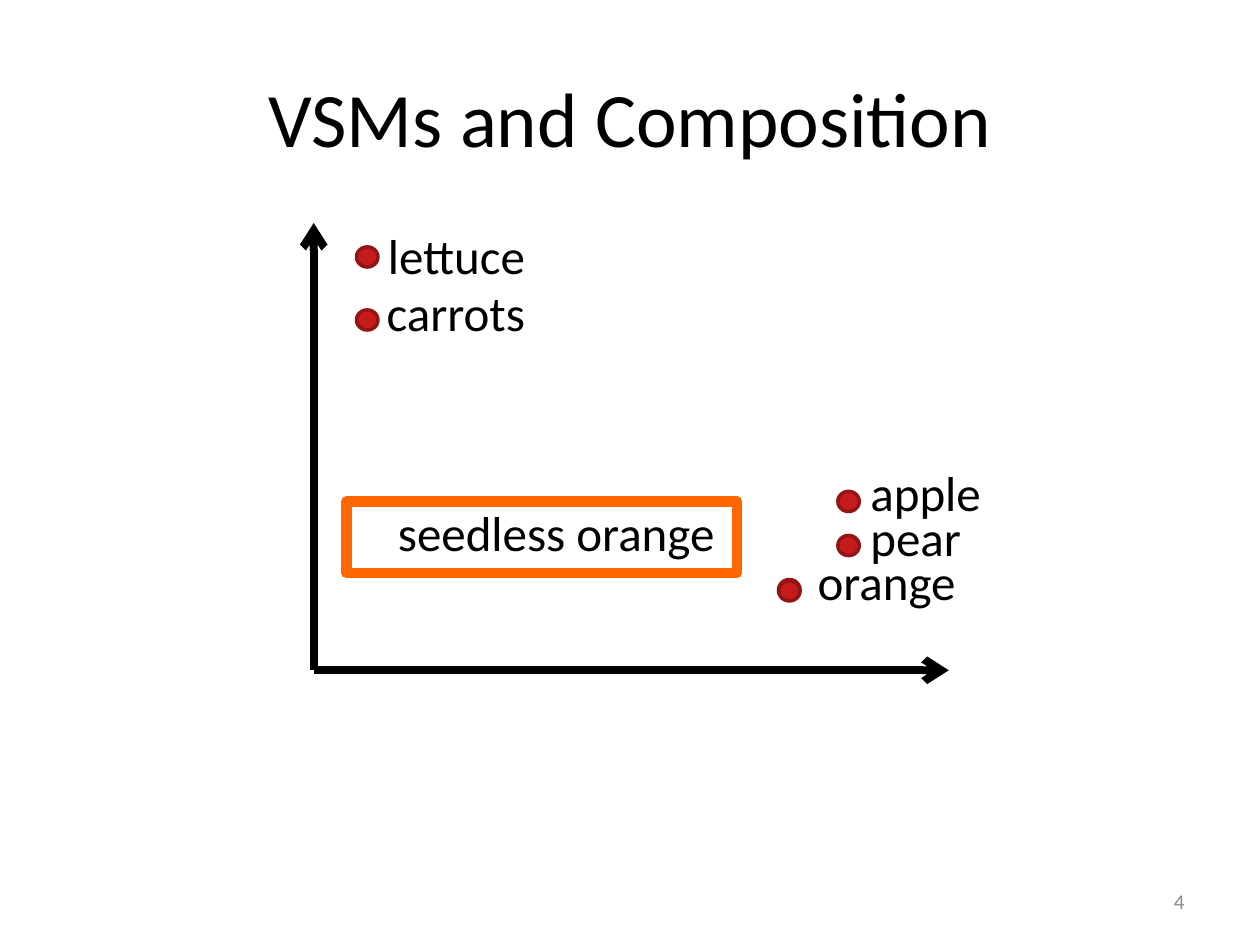
from dataclasses import dataclass

from lxml.etree import SubElement
from pptx import Presentation
from pptx.dml.color import RGBColor as RGB
from pptx.enum.shapes import MSO_CONNECTOR as CONNECTOR, MSO_SHAPE as SHAPE
from pptx.enum.text import MSO_ANCHOR as ANCHOR, MSO_AUTO_SIZE as AUTO_SIZE, PP_ALIGN as ALIGN
from pptx.oxml.ns import qn
from pptx.util import Pt

PX = 9144  # EMU per px, 100 px to the inch


@dataclass(frozen=True)
class Theme:
    font: str = "Calibri"
    title_size: int = 44
    label_size: int = 28
    number_size: int = 12
    ink: RGB = RGB(0, 0, 0)
    muted: RGB = RGB(0x8C, 0x8C, 0x8C)
    dot: RGB = RGB(0xC6, 0x1B, 0x1B)
    dot_edge: RGB = RGB(0x92, 0x14, 0x14)
    highlight: RGB = RGB(0xFF, 0x66, 0x00)
    axis_width: float = 4.5
    dot_width: int = 2
    highlight_width: int = 6


THEME = Theme()
DOT_SIZE = (17, 16)
LABEL_HEIGHT = 57

# word, label (left, top, width), dots (left, top), relative to the plot box
WORDS = [
    ("pear", (432, 221, 93), [(416, 248)]),
    ("lettuce", (49, -3, 130), [(34, 19)]),
    ("orange", (390, 256, 132), [(369, 283), (369, 284)]),
    ("apple", (432, 185, 109), [(416, 213)]),
    ("carrots", (48, 42, 132), [(34, 69)]),
    ("seedless orange", (57, 217, 278), []),
]


def emu(*lengths):
    return [length * PX for length in lengths]


def write(frame, text, size, color, align=ALIGN.LEFT):
    frame.text = text
    paragraph = frame.paragraphs[0]
    paragraph.alignment = align
    font = paragraph.runs[0].font
    font.name, font.size, font.color.rgb = THEME.font, Pt(size), color


def add_label(slide, text, left, top, width):
    frame = slide.shapes.add_textbox(*emu(left, top, width, LABEL_HEIGHT)).text_frame
    frame.word_wrap = False
    frame.auto_size = AUTO_SIZE.SHAPE_TO_FIT_TEXT
    write(frame, text, THEME.label_size, THEME.ink)


def add_axis(slide, start, end):
    axis = slide.shapes.add_connector(CONNECTOR.STRAIGHT, *emu(*start, *end))
    axis.line.color.rgb = THEME.ink
    axis.line.width = Pt(THEME.axis_width)
    SubElement(axis.line._get_or_add_ln(), qn("a:tailEnd"), type="arrow")
    SubElement(axis._element.spPr, qn("a:effectLst"))


def add_outlined(slide, kind, box, edge, width, fill=None):
    outlined = slide.shapes.add_shape(kind, *emu(*box))
    outlined.shadow.inherit = False
    if fill is None:
        outlined.fill.background()
    else:
        outlined.fill.solid()
        outlined.fill.fore_color.rgb = fill
    outlined.line.color.rgb = edge
    outlined.line.width = Pt(width)


def add_title(slide, box):
    title = slide.shapes.title
    title.left, title.top, title.width, title.height = emu(*box)
    title.text_frame.vertical_anchor = ANCHOR.MIDDLE
    write(title.text_frame, "VSMs and Composition", THEME.title_size, THEME.ink, ALIGN.CENTER)


def add_vector_space(slide, box):
    left, top, width, height = box
    origin = (left, top + height)

    # Axes
    add_axis(slide, origin, (left, top))
    add_axis(slide, origin, (left + width, top + height))

    # Words and their points
    for word, (x, y, label_width), dots in WORDS:
        add_label(slide, word, left + x, top + y, label_width)
        for dot_x, dot_y in dots:
            add_outlined(slide, SHAPE.OVAL, (left + dot_x, top + dot_y, *DOT_SIZE),
                         THEME.dot_edge, THEME.dot_width, THEME.dot)

    # Frame around the composed phrase
    add_outlined(slide, SHAPE.RECTANGLE, (left + 26, top + 221, 310, LABEL_HEIGHT),
                 THEME.highlight, THEME.highlight_width)


def add_page_number(slide, box):
    frame = slide.shapes.add_textbox(*emu(*box)).text_frame
    frame.word_wrap = True
    frame.vertical_anchor = ANCHOR.MIDDLE
    write(frame, "4", THEME.number_size, THEME.muted, ALIGN.RIGHT)


def main():
    deck = Presentation()
    deck.slide_width, deck.slide_height = emu(1000, 750)
    slide = deck.slides.add_slide(deck.slide_layouts[5])  # title only
    add_title(slide, (50, 30, 900, 125))
    add_vector_space(slide, (249, 177, 504, 355))
    add_page_number(slide, (717, 695, 233, 40))
    deck.save("out.pptx")


if __name__ == "__main__":
    main()
